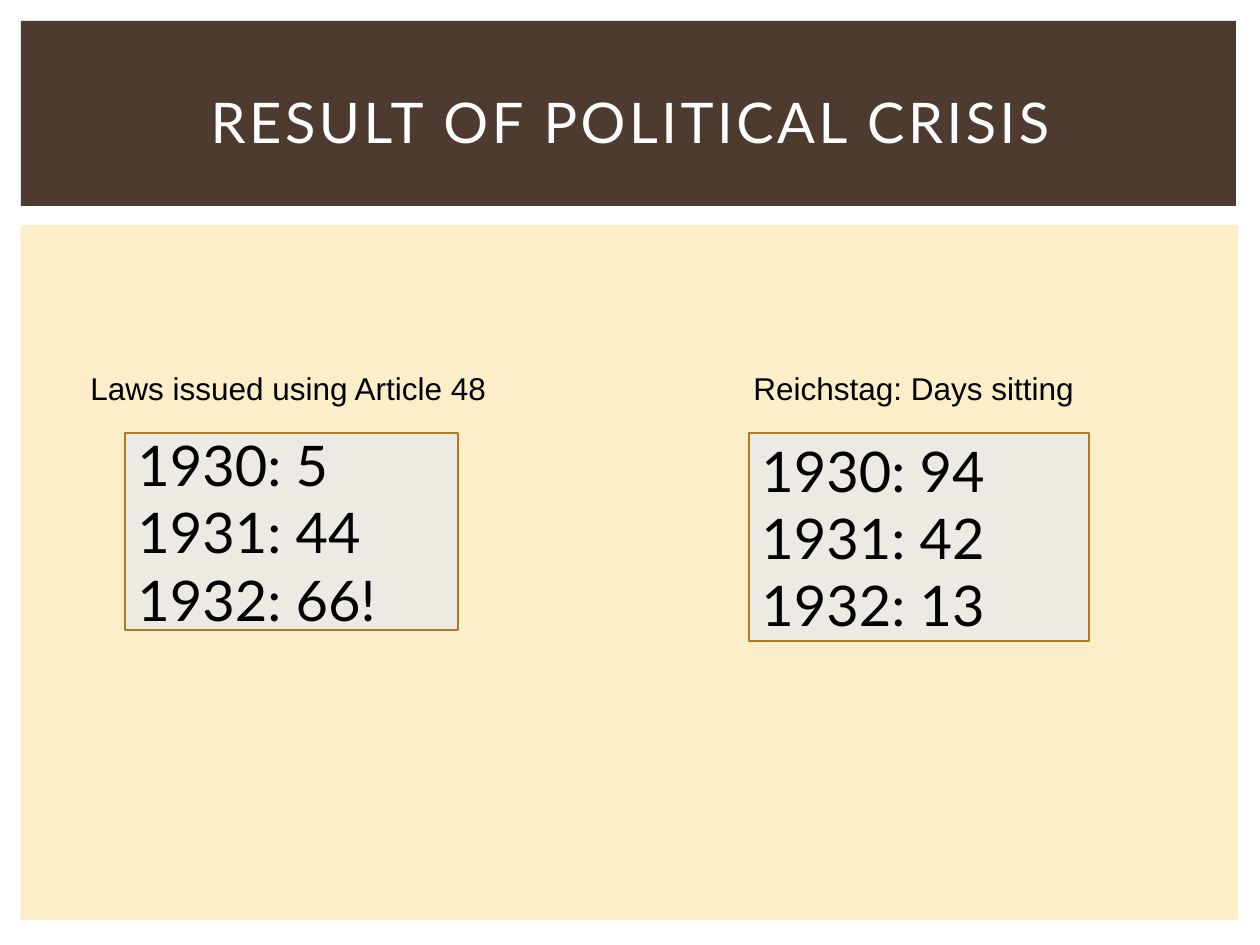
import pptx
import pptx.dml.color
import pptx.enum.shapes
import pptx.enum.text
import pptx.util

RGB = pptx.dml.color.RGBColor
ALIGN = pptx.enum.text.PP_ALIGN
ANCHOR = pptx.enum.text.MSO_ANCHOR

WHITE = RGB(0xFF, 0xFF, 0xFF)
BLACK = RGB(0, 0, 0)
CREAM = RGB(0xFB, 0xEE, 0xC9)
BROWN = RGB(0x4E, 0x3B, 0x30)
GREY = RGB(0xEC, 0xEA, 0xE3)
ORANGE = RGB(0xB2, 0x78, 0x22)

PX_PER_INCH = 126


def emu(px):
    return pptx.util.Emu(round(px * 914400 / PX_PER_INCH))


class Deck:
    heading_font = "Lato"
    label_font = "Arial"

    def __init__(self, width, height):
        self.prs = pptx.Presentation()
        self.prs.slide_width, self.prs.slide_height = emu(width), emu(height)
        self.s = self.prs.slides.add_slide(self.prs.slide_layouts[6])

    def add_lines(self, tf, lines, font, size, color, align=ALIGN.LEFT, spacing=0):
        """Put one paragraph per line; spacing is in points between letters."""
        for i, line in enumerate(lines):
            p = tf.paragraphs[0] if i == 0 else tf.add_paragraph()
            p.alignment = align
            r = p.add_run()
            r.text = line
            r.font.name, r.font.size = font, pptx.util.Pt(size)
            r.font.color.rgb = color
            if spacing:
                r._r.get_or_add_rPr().set("spc", str(spacing * 100))

    def panel(self, box, fill, line=None):
        sp = self.s.shapes.add_shape(
            pptx.enum.shapes.MSO_SHAPE.RECTANGLE, *map(emu, box))
        sp.shadow.inherit = False
        sp.fill.solid()
        sp.fill.fore_color.rgb = fill
        if line is None:
            sp.line.fill.background()
        else:
            sp.line.color.rgb = line
            sp.line.width = pptx.util.Pt(1.5)
        return sp

    def figures(self, box, lines):
        """Bordered panel listing the figure for each year."""
        tf = self.panel(box, GREY, ORANGE).text_frame
        tf.word_wrap = True
        tf.vertical_anchor = ANCHOR.MIDDLE
        self.add_lines(tf, lines, self.heading_font, 32, BLACK)

    def title(self, box, text):
        tf = self.s.shapes.add_textbox(*map(emu, box)).text_frame
        tf.word_wrap = True
        tf.vertical_anchor = ANCHOR.MIDDLE
        self.add_lines(tf, [text], self.heading_font, 32, WHITE, ALIGN.CENTER, 2)

    def label(self, box, text):
        tf = self.s.shapes.add_textbox(*map(emu, box)).text_frame
        tf.word_wrap = False
        tf.auto_size = pptx.enum.text.MSO_AUTO_SIZE.SHAPE_TO_FIT_TEXT
        self.add_lines(tf, [text], self.label_font, 18, BLACK)


def main():
    deck = Deck(1260, 945)
    deck.panel((21, 225, 1217, 695), CREAM)
    deck.panel((21, 21, 1215, 185), BROWN)
    deck.figures((749, 433, 340, 208), ["1930: 94", "1931: 42", "1932: 13"])
    deck.figures((125, 433, 333, 197), ["1930: 5", "1931: 44", "1932: 66!"])
    deck.title((53, 49, 1155, 145), "RESULT OF POLITICAL CRISIS")
    deck.label((78, 363, 425, 50), "Laws issued using Article 48")
    deck.label((741, 363, 349, 50), "Reichstag: Days sitting")
    deck.prs.save("out.pptx")


if __name__ == "__main__":
    main()
